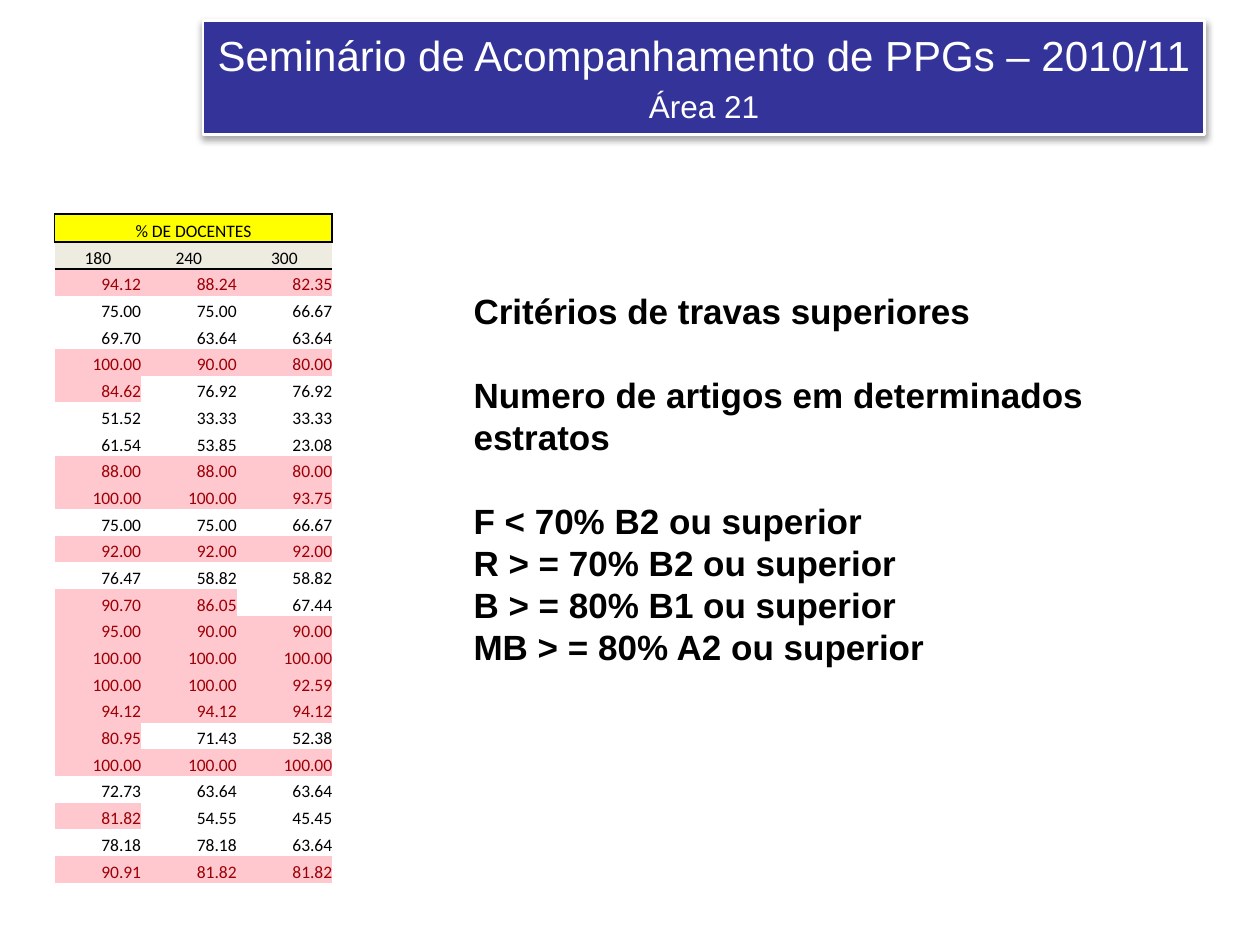
from dataclasses import dataclass

from lxml.etree import SubElement
from pptx import Presentation
from pptx.dml.color import RGBColor
from pptx.enum.shapes import MSO_SHAPE
from pptx.enum.text import MSO_ANCHOR, PP_ALIGN
from pptx.oxml import parse_xml
from pptx.oxml.ns import nsdecls, qn
from pptx.util import Pt


@dataclass(frozen=True)
class Theme:
    heading_font: str = "Arial"
    table_font: str = "Calibri"
    title_size: int = 24
    subtitle_size: int = 18
    body_size: int = 20
    table_size: int = 10
    white: str = "FFFFFF"
    black: str = "000000"
    banner: str = "333399"
    table_title: str = "FFFF00"
    table_head: str = "EEECE1"
    high_fill: str = "FFC7CE"
    high_text: str = "9C0006"


class SlideBuilder:
    NO_STYLE = "{2D5ABB26-0587-4C30-8999-92F81FD0307C}"

    def __init__(self, page, theme):
        self.page = page
        self.theme = theme

    def add_text(self, para, text, font, size, color, bold=False, **layout):
        span = para.add_run()
        span.text = text
        for name, value in {"name": font, "size": Pt(size), "bold": bold}.items():
            setattr(span.font, name, value)
        span.font.color.rgb = RGBColor.from_string(color)
        for name, value in layout.items():
            setattr(para, name, value)

    def paragraphs(self, frame, lines):
        for index, line in enumerate(lines):
            para = frame.add_paragraph() if index else frame.paragraphs[0]
            self.add_text(para, **line)

    def banner(self, left, top, width, height, lines):
        box = self.page.shapes.add_shape(
            MSO_SHAPE.RECTANGLE, Pt(left), Pt(top), Pt(width), Pt(height))
        box.fill.solid()
        box.fill.fore_color.rgb = RGBColor.from_string(self.theme.banner)
        box.line.color.rgb = RGBColor.from_string(self.theme.white)
        box.line.width = Pt(1.57)
        # Soft shadow straight below
        box.shadow.inherit = False
        effects = box.element.spPr.find(qn("a:effectLst"))
        shadow = SubElement(effects, qn("a:outerShdw"), blurRad=str(Pt(4)),
                            dist=str(Pt(2)), dir="5400000", rotWithShape="0")
        color = SubElement(shadow, qn("a:srgbClr"), val=self.theme.black)
        SubElement(color, qn("a:alpha"), val="35000")
        frame = box.text_frame
        settings = {"word_wrap": True, "vertical_anchor": MSO_ANCHOR.MIDDLE,
                    "margin_left": Pt(3.6), "margin_right": Pt(3.6)}
        for name, value in settings.items():
            setattr(frame, name, value)
        self.paragraphs(frame, lines)

    def text(self, left, top, width, height, lines):
        box = self.page.shapes.add_textbox(Pt(left), Pt(top), Pt(width), Pt(height))
        box.text_frame.word_wrap = True
        self.paragraphs(box.text_frame, lines)

    def border(self, cell, sides):
        props = cell._tc.get_or_add_tcPr()
        for index, side in enumerate(sides):
            props.insert(index, parse_xml(
                f'<a:ln{side} {nsdecls("a")} w="{Pt(1)}"><a:solidFill>'
                f'<a:srgbClr val="{self.theme.black}"/></a:solidFill></a:ln{side}>'))

    def cell(self, cell, text, align, color, fill=None):
        for side in ("left", "right", "top", "bottom"):
            setattr(cell, f"margin_{side}", 0)
        cell.vertical_anchor = MSO_ANCHOR.BOTTOM
        if fill:
            cell.fill.solid()
            cell.fill.fore_color.rgb = RGBColor.from_string(fill)
        else:
            cell.fill.background()
        self.add_text(cell.text_frame.paragraphs[0], text, self.theme.table_font,
                      self.theme.table_size, color, alignment=align)

    def table(self, left, top, widths, title_height, row_height, title, heads,
              values, threshold):
        theme = self.theme
        height = title_height + row_height * (len(values) + 1)
        frame = self.page.shapes.add_table(
            len(values) + 2, len(widths), Pt(left), Pt(top),
            Pt(sum(widths)), Pt(height))
        frame.element.find(".//" + qn("a:tableStyleId")).text = self.NO_STYLE
        table = frame.table
        table.first_row = table.horz_banding = False
        for column, width in zip(table.columns, widths):
            column.width = Pt(width)
        for index, row in enumerate(table.rows):
            row.height = Pt(row_height if index else title_height)

        # Title across all columns, then column heads
        table.cell(0, 0).merge(table.cell(0, len(widths) - 1))
        self.cell(table.cell(0, 0), title, PP_ALIGN.CENTER, theme.black,
                  theme.table_title)
        for column, sides in enumerate(("LRTB", "TB", "RTB")):
            self.border(table.cell(0, column), sides)
        for column, head in enumerate(heads):
            self.cell(table.cell(1, column), head, PP_ALIGN.CENTER, theme.black,
                      theme.table_head)
            self.border(table.cell(1, column), "T")

        # Values at or above the threshold are highlighted
        for row, numbers in enumerate(values, start=2):
            for column, number in enumerate(numbers):
                high = number >= threshold
                self.cell(table.cell(row, column), f"{number:.2f}", PP_ALIGN.RIGHT,
                          theme.high_text if high else theme.black,
                          theme.high_fill if high else None)


TEACHER_SHARES = [
    (94.12, 88.24, 82.35), (75, 75, 66.67), (69.7, 63.64, 63.64),
    (100, 90, 80), (84.62, 76.92, 76.92), (51.52, 33.33, 33.33),
    (61.54, 53.85, 23.08), (88, 88, 80), (100, 100, 93.75),
    (75, 75, 66.67), (92, 92, 92), (76.47, 58.82, 58.82),
    (90.7, 86.05, 67.44), (95, 90, 90), (100, 100, 100),
    (100, 100, 92.59), (94.12, 94.12, 94.12), (80.95, 71.43, 52.38),
    (100, 100, 100), (72.73, 63.64, 63.64), (81.82, 54.55, 45.45),
    (78.18, 78.18, 63.64), (90.91, 81.82, 81.82),
]

# Criteria and the gap after each, in points
CRITERIA = [
    ("Critérios de travas superiores", 24),
    ("Numero de artigos em determinados estratos", 24),
    ("F < 70% B2 ou superior", 0),
    ("R > = 70% B2 ou superior", 0),
    ("B > = 80% B1 ou superior", 0),
    ("MB > = 80% A2 ou superior", 0),
]


def main():
    theme = Theme()
    deck = Presentation()
    deck.slide_width, deck.slide_height = Pt(720), Pt(540)
    page = deck.slides.add_slide(deck.slide_layouts[6])
    builder = SlideBuilder(page, theme)

    # Banner
    heading = {"font": theme.heading_font, "color": theme.white,
               "alignment": PP_ALIGN.CENTER}
    builder.banner(116, 11.5, 572.5, 65.5, [
        {"text": "Seminário de Acompanhamento de PPGs – 2010/11",
         "size": theme.title_size, **heading},
        {"text": "Área 21", "size": theme.subtitle_size,
         "space_before": Pt(4), **heading},
    ])

    # Share of teachers
    builder.table(31.2, 122.4, (49.4, 54.6, 54.6), 16, 15.26, "% DE DOCENTES",
                  ("180", "240", "300"), TEACHER_SHARES, threshold=80)

    # Criteria
    builder.text(263.5, 162, 402.5, 225.4, [
        {"text": text, "font": theme.heading_font, "size": theme.body_size,
         "color": theme.black, "bold": True, "line_spacing": Pt(24),
         "space_after": Pt(gap)}
        for text, gap in CRITERIA
    ])
    deck.save("out.pptx")


if __name__ == "__main__":
    main()
